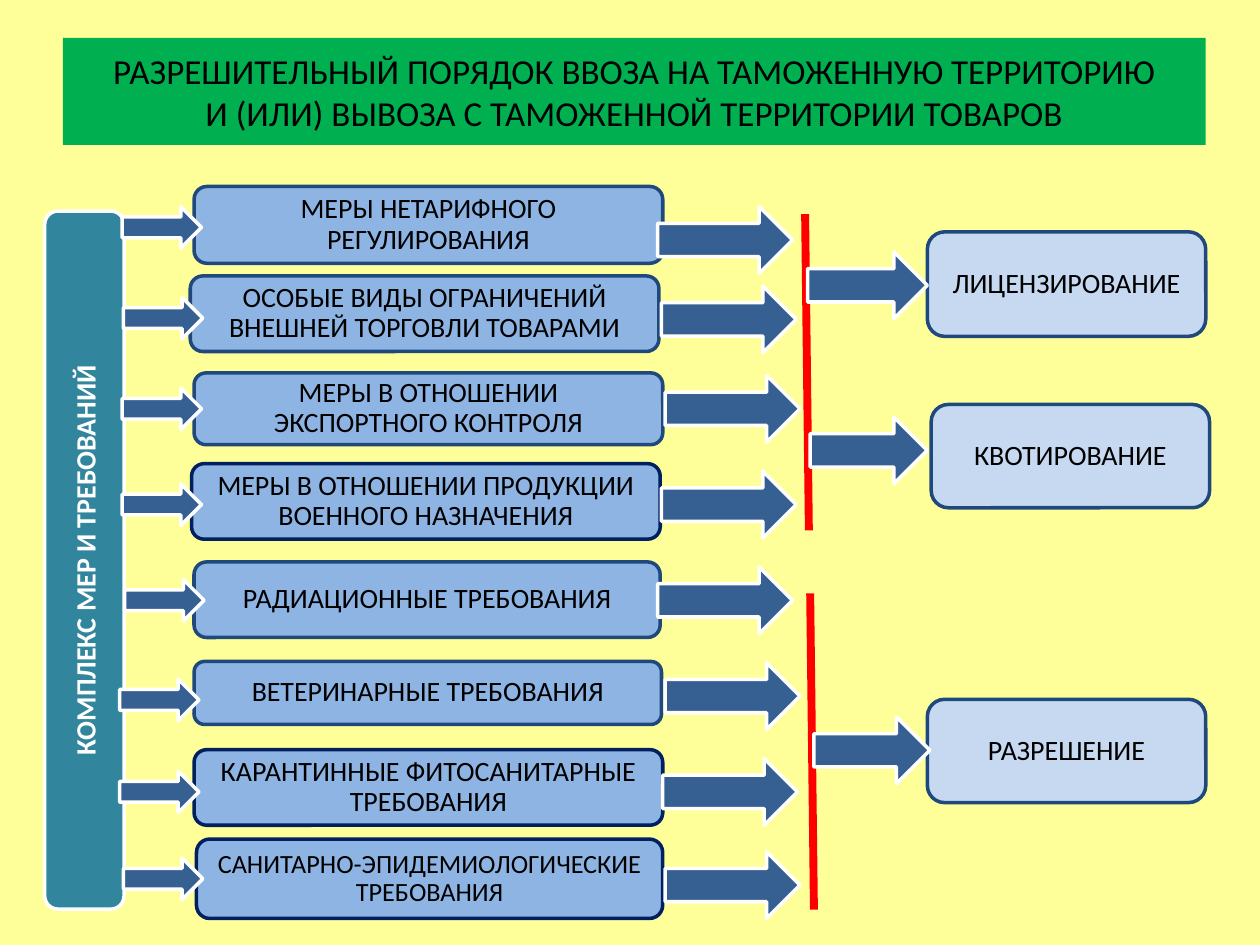
from pptx import Presentation
from pptx.dml.color import RGBColor
from pptx.enum.shapes import MSO_CONNECTOR, MSO_SHAPE
from pptx.enum.text import MSO_ANCHOR, PP_ALIGN
from pptx.oxml.ns import qn
from pptx.util import Inches, Pt
from lxml.etree import SubElement

YELLOW = RGBColor(0xFF, 0xFF, 0x99)
GREEN = RGBColor(0x00, 0xB0, 0x50)
SKY = RGBColor(0x8E, 0xB4, 0xE3)
PALE = RGBColor(0xC6, 0xD9, 0xF1)
TEAL = RGBColor(0x31, 0x85, 0x9C)
STEEL = RGBColor(0x37, 0x60, 0x92)
BLUE = RGBColor(0x1F, 0x49, 0x7D)
NAVY = RGBColor(0x00, 0x20, 0x60)
RED = RGBColor(0xFF, 0x00, 0x00)
WHITE = RGBColor(0xFF, 0xFF, 0xFF)
BLACK = RGBColor(0x00, 0x00, 0x00)

TITLE = ("РАЗРЕШИТЕЛЬНЫЙ ПОРЯДОК ВВОЗА НА ТАМОЖЕННУЮ ТЕРРИТОРИЮ\v"
         "И (ИЛИ) ВЫВОЗА С ТАМОЖЕННОЙ ТЕРРИТОРИИ ТОВАРОВ")
MEASURES = [
    ("МЕРЫ НЕТАРИФНОГО РЕГУЛИРОВАНИЯ", (1.54, 1.48, 3.72, 0.61), BLUE, 16),
    ("ОСОБЫЕ ВИДЫ ОГРАНИЧЕНИЙ ВНЕШНЕЙ ТОРГОВЛИ ТОВАРАМИ", (1.51, 2.19, 3.72, 0.6), BLUE, 16),
    ("МЕРЫ В ОТНОШЕНИИ ЭКСПОРТНОГО КОНТРОЛЯ", (1.54, 2.96, 3.72, 0.57), BLUE, 16),
    ("МЕРЫ В ОТНОШЕНИИ ПРОДУКЦИИ ВОЕННОГО НАЗНАЧЕНИЯ", (1.52, 3.68, 3.72, 0.6), NAVY, 16),
    ("РАДИАЦИОННЫЕ ТРЕБОВАНИЯ", (1.54, 4.46, 3.7, 0.6), BLUE, 16),
    ("ВЕТЕРИНАРНЫЕ ТРЕБОВАНИЯ", (1.54, 5.25, 3.71, 0.5), BLUE, 16),
    ("КАРАНТИННЫЕ ФИТОСАНИТАРНЫЕ ТРЕБОВАНИЯ", (1.54, 5.95, 3.72, 0.6), NAVY, 16),
    ("САНИТАРНО-ЭПИДЕМИОЛОГИЧЕСКИЕ ТРЕБОВАНИЯ", (1.56, 6.66, 3.7, 0.63), NAVY, 15),
]
RESULTS = [
    ("ЛИЦЕНЗИРОВАНИЕ", (7.36, 1.84, 2.21, 0.83)),
    ("КВОТИРОВАНИЕ", (7.39, 3.21, 2.21, 0.82)),
    ("РАЗРЕШЕНИЕ", (7.36, 5.55, 2.21, 0.82)),
]
ENTRIES = [(0.97, 1.64), (0.98, 2.36), (0.97, 3.08), (0.97, 3.84),
           (0.99, 4.6), (0.95, 5.39), (0.95, 6.12), (0.98, 6.81)]
EXITS = [(5.22, 1.64), (5.25, 2.27), (5.28, 2.98), (5.25, 3.74),
         (5.22, 4.5), (5.28, 5.26), (5.26, 6.02), (5.28, 6.76)]
LINKS = [(6.41, 2, 0.95), (6.43, 3.31, 0.93), (6.46, 5.69, 0.92)]
BARS = [(6.39, 1.7, 6.42, 4.21), (6.43, 4.71, 6.46, 7.22)]


def add_form(slide, kind, area, fill, edge=None):
    """Add a flat preset shape, outlined when an edge colour is given."""
    form = slide.shapes.add_shape(kind, *map(Inches, area))
    form.shadow.inherit = False
    form.fill.solid()
    form.fill.fore_color.rgb = fill
    if edge is None:
        form.line.fill.background()
    else:
        form.line.color.rgb = edge
        form.line.width = Pt(2)
    return form


def set_text(form, text, size, color=BLACK, bold=False, inset=0.11, lead=0.9):
    """Write centred Calibri text into a shape."""
    frame = form.text_frame
    frame.word_wrap = True
    frame.vertical_anchor = MSO_ANCHOR.MIDDLE
    frame.margin_left = frame.margin_right = Inches(inset)
    frame.margin_top = frame.margin_bottom = Inches(inset)
    frame.text = text
    for para in frame.paragraphs:
        para.alignment = PP_ALIGN.CENTER
        para.line_spacing = lead
        for run in para.runs:
            run.font.name = "Calibri"
            run.font.size = Pt(size)
            run.font.bold = bold
            run.font.color.rgb = color


def add_box(slide, text, area, fill, edge, size=16):
    """Add a rounded box with its label."""
    box = add_form(slide, MSO_SHAPE.ROUNDED_RECTANGLE, area, fill, edge)
    set_text(box, text, size)


def add_arrow(slide, left, top, width, height):
    """Add a block arrow pointing right."""
    add_form(slide, MSO_SHAPE.RIGHT_ARROW, (left, top, width, height), STEEL, WHITE)


def add_bar(slide, ends):
    """Add a thick red line that gathers a group of measures."""
    bar = slide.shapes.add_connector(MSO_CONNECTOR.STRAIGHT, *map(Inches, ends))
    bar.line.color.rgb = RED
    bar.line.width = Pt(4.5)
    SubElement(bar.element.spPr, qn("a:effectLst"))


def main():
    """Build the slide and save it."""
    deck = Presentation()
    deck.slide_width, deck.slide_height = Inches(10), Inches(7.5)
    slide = deck.slides.add_slide(deck.slide_layouts[6])
    slide.background.fill.solid()
    slide.background.fill.fore_color.rgb = YELLOW

    title = add_form(slide, MSO_SHAPE.RECTANGLE, (0.5, 0.3, 9.07, 0.85), GREEN)
    set_text(title, TITLE, 20, inset=0.05, lead=1)

    spine = add_form(slide, MSO_SHAPE.ROUNDED_RECTANGLE, (-2.1, 4.13, 5.54, 0.63), TEAL, WHITE)
    spine.rotation = 270
    set_text(spine, "КОМПЛЕКС МЕР И ТРЕБОВАНИЙ", 16, WHITE, bold=True, lead=1)

    for text, area, edge, size in MEASURES:
        add_box(slide, text, area, SKY, edge, size)
    for text, area in RESULTS:
        add_box(slide, text, area, PALE, BLUE)
    for ends in BARS:
        add_bar(slide, ends)
    for left, top in EXITS:
        add_arrow(slide, left, top, 1.07, 0.53)
    for left, top, width in LINKS:
        add_arrow(slide, left, top, width, 0.53)
    for left, top in ENTRIES:
        add_arrow(slide, left, top, 0.63, 0.33)

    deck.save("out.pptx")


if __name__ == "__main__":
    main()
